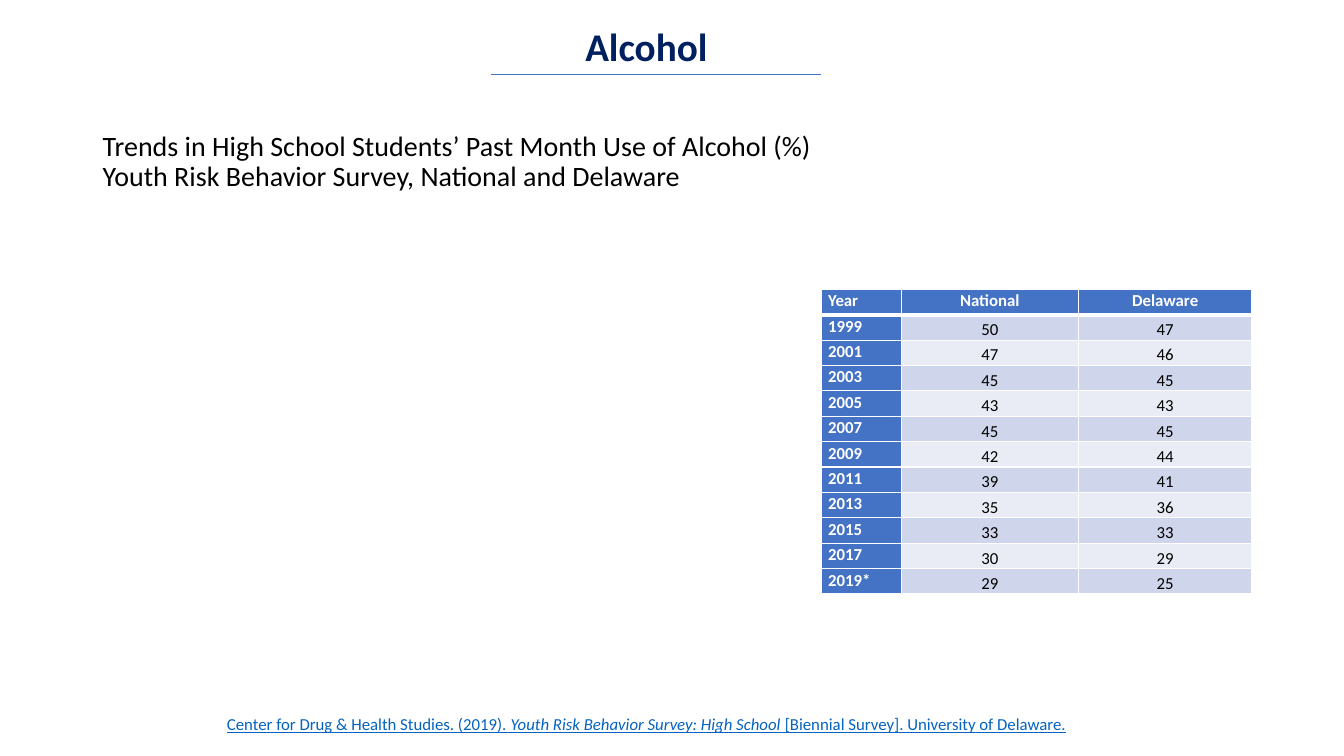
import pptx
import pptx.dml.color
import pptx.enum.shapes
import pptx.enum.text
import pptx.oxml
import pptx.oxml.ns
import pptx.util
from lxml import etree

Cm, Pt = pptx.util.Cm, pptx.util.Pt
RGBColor = pptx.dml.color.RGBColor
ANCHOR = pptx.enum.text.MSO_ANCHOR
ALIGN = pptx.enum.text.PP_ALIGN
FIT = pptx.enum.text.MSO_AUTO_SIZE

BLACK = RGBColor(0x00, 0x00, 0x00)
WHITE = RGBColor(0xFF, 0xFF, 0xFF)
NAVY = RGBColor(0x00, 0x20, 0x60)
BLUE = RGBColor(0x44, 0x72, 0xC4)
BAND_DARK = RGBColor(0xCF, 0xD5, 0xEA)
BAND_LIGHT = RGBColor(0xE9, 0xEB, 0xF5)
LINK_BLUE = RGBColor(0x05, 0x63, 0xC1)

SURVEY = [
    ("Year", "National", "Delaware"),
    ("1999", 50, 47), ("2001", 47, 46), ("2003", 45, 45), ("2005", 43, 43),
    ("2007", 45, 45), ("2009", 42, 44), ("2011", 39, 41), ("2013", 35, 36),
    ("2015", 33, 33), ("2017", 30, 29), ("2019*", 29, 25),
]


class SlideBuilder:
    font = "Calibri"

    def __init__(self, prs):
        self.s = prs.slides.add_slide(prs.slide_layouts[6])

    def run(self, p, text, color, **fmt):
        r = p.add_run()
        r.text = text
        r.font.color.rgb = color
        for name, value in {"name": self.font, **fmt}.items():
            setattr(r.font, name, value)

    def text(self, box, lines, color, spacing=1.0, frame=None, **fmt):
        """Each line is a list of (text, extra format) runs."""
        sp = self.s.shapes.add_textbox(*map(Cm, box))
        tf = sp.text_frame
        for name, value in {"word_wrap": True, **(frame or {})}.items():
            setattr(tf, name, value)
        p = tf.paragraphs[0]
        p.line_spacing = spacing
        for i, runs in enumerate(lines):
            if i:
                p.add_line_break()
            for text, extra in runs:
                self.run(p, text, color, **{**fmt, **extra})

    def line(self, x1, y1, x2, y2, color, width):
        c = self.s.shapes.add_connector(
            pptx.enum.shapes.MSO_CONNECTOR.STRAIGHT, *map(Cm, (x1, y1, x2, y2)))
        c.line.color.rgb = color
        c.line.width = Pt(width)
        etree.SubElement(c._element.spPr, pptx.oxml.ns.qn("a:effectLst"))

    def border(self, cell, side, width):
        cell._tc.get_or_add_tcPr().append(pptx.oxml.parse_xml(
            f'<a:ln{side} {pptx.oxml.ns.nsdecls("a")} w="{Pt(width)}">'
            f'<a:solidFill><a:srgbClr val="{WHITE}"/></a:solidFill></a:ln{side}>'))

    def cell(self, cell, value, row, col):
        head = row == 0 or col == 0
        margins = {"margin_left": Cm(0.17), "margin_right": Cm(0.17),
                   "margin_top": 0, "margin_bottom": 0,
                   "vertical_anchor": ANCHOR.TOP if head else ANCHOR.BOTTOM}
        for name, setting in margins.items():
            setattr(cell, name, setting)
        # A thick rule separates the header from the data
        for side in "LRTB":
            thick = (row, side) in ((0, "B"), (1, "T"))
            self.border(cell, side, 3 if thick else 1)
        cell.fill.solid()
        band = BAND_DARK if row % 2 else BAND_LIGHT
        cell.fill.fore_color.rgb = BLUE if head else band
        p = cell.text_frame.paragraphs[0]
        p.line_spacing = 1.07
        p.alignment = ALIGN.CENTER if col else ALIGN.LEFT
        self.run(p, str(value), WHITE if head else BLACK, size=Pt(12), bold=head)

    def table(self, left, top, widths, row_height, rows):
        tbl = self.s.shapes.add_table(
            len(rows), len(widths), Cm(left), Cm(top),
            Cm(sum(widths)), Cm(row_height * len(rows))).table
        for column, width in zip(tbl.columns, widths):
            column.width = Cm(width)
        for i, values in enumerate(rows):
            tbl.rows[i].height = Cm(row_height)
            for j, value in enumerate(values):
                self.cell(tbl.cell(i, j), value, i, j)


def main():
    prs = pptx.Presentation()
    prs.slide_width, prs.slide_height = Cm(33.87), Cm(19.05)
    slide = SlideBuilder(prs)

    # Chart title
    slide.text((2.34, 2.84, 29.21, 2.51),
               [[("Trends in High School Students’ Past Month Use of Alcohol (%)", {})],
                [("Youth Risk Behavior Survey, National and Delaware", {})]],
               BLACK, 0.9, {"vertical_anchor": ANCHOR.MIDDLE}, size=Pt(20))

    # Survey table
    slide.table(20.7, 7.29, (2.01, 4.47, 4.37), 0.64, SURVEY)

    # Topic heading with its rule
    slide.text((14.5, 0.43, 3.89, 1.45), [[("Alcohol", {})]], NAVY,
               frame={"auto_size": FIT.SHAPE_TO_FIT_TEXT}, size=Pt(28), bold=True)
    slide.line(12.37, 1.88, 20.7, 1.88, BLUE, 0.5)

    # Source citation
    slide.text((5.31, 17.83, 24.64, 0.79),
               [[("Center for Drug & Health Studies. (2019). ", {}),
                 ("Youth Risk Behavior Survey: High School", {"italic": True}),
                 (" [Biennial Survey]. University of Delaware.", {})]],
               LINK_BLUE, 1.07,
               {"auto_size": FIT.SHAPE_TO_FIT_TEXT, "margin_left": Cm(0.41)},
               size=Pt(12), underline=True)

    prs.save("out.pptx")


if __name__ == "__main__":
    main()
